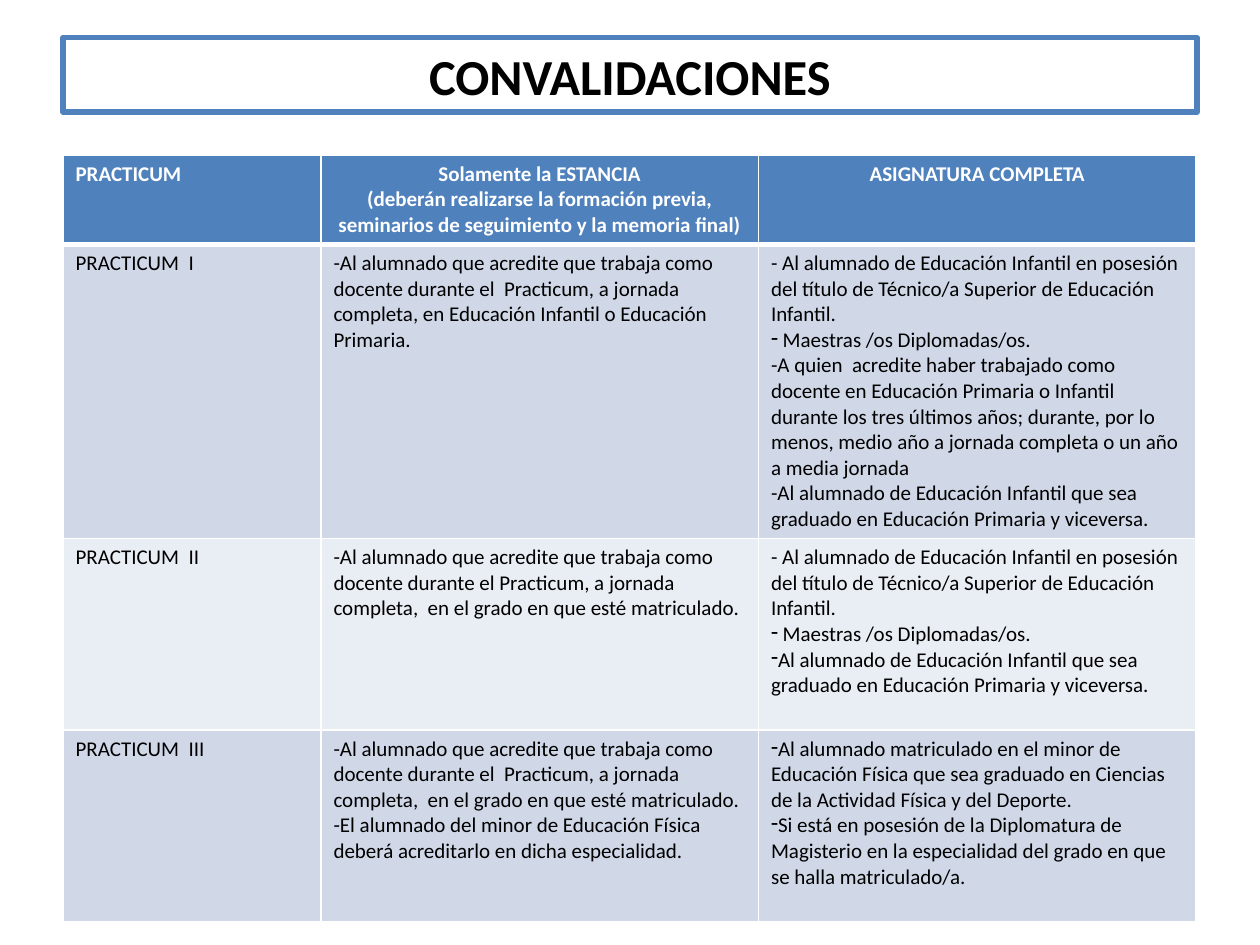
from dataclasses import dataclass

from lxml.etree import SubElement
from pptx import Presentation
from pptx.dml.color import RGBColor
from pptx.enum.shapes import MSO_SHAPE
from pptx.enum.text import MSO_ANCHOR, PP_ALIGN
from pptx.oxml.ns import qn
from pptx.util import Cm, Pt


@dataclass(frozen=True)
class Theme:
    font: str = "Calibri"
    blue: str = "4F81BD"
    dark: str = "D0D8E8"
    light: str = "E9EDF4"
    white: str = "FFFFFF"
    black: str = "000000"
    title: float = 28.8
    body: float = 12
    thin: float = 1
    thick: float = 3


@dataclass(frozen=True)
class Item:
    text: str
    bullet: bool = False


@dataclass(frozen=True)
class Row:
    height: float
    cells: tuple[tuple[Item, ...], ...]


THEME = Theme()
LEFT = 1.27
WIDTHS = (5.2, 8.82, 8.82)

DEGREE = Item(
    "- Al alumnado de Educación Infantil en posesión del título de "
    "Técnico/a Superior de Educación Infantil."
)
TEACHER = Item(" Maestras /os Diplomadas/os.", True)
GRADUATE = (
    "Al alumnado de Educación Infantil que sea graduado en "
    "Educación Primaria y viceversa."
)
WORKER = "-Al alumnado que acredite que trabaja como docente durante el "

ROWS = (
    Row(1.8, (
        (Item("PRACTICUM"),),
        (
            Item("Solamente la ESTANCIA"),
            Item("(deberán realizarse la formación previa, seminarios de "
                 "seguimiento y la memoria final)"),
        ),
        (Item("ASIGNATURA COMPLETA"),),
    )),
    Row(5.93, (
        (Item("PRACTICUM  I"),),
        (Item(WORKER + " Practicum, a jornada completa, en Educación Infantil "
              "o Educación Primaria."),),
        (
            DEGREE,
            TEACHER,
            Item("-A quien  acredite haber trabajado como docente en Educación "
                 "Primaria o Infantil durante los tres últimos años; durante, "
                 "por lo menos, medio año a jornada completa o un año a media "
                 "jornada"),
            Item("-" + GRADUATE),
        ),
    )),
    Row(3.86, (
        (Item("PRACTICUM  II"),),
        (Item(WORKER + "Practicum, a jornada completa,  en el grado en que "
              "esté matriculado."),),
        (DEGREE, TEACHER, Item(GRADUATE, True)),
    )),
    Row(3.86, (
        (Item("PRACTICUM  III"),),
        (Item(WORKER + " Practicum, a jornada completa,  en el grado en que "
              "esté matriculado. -El alumnado del minor de Educación Física "
              "deberá acreditarlo en dicha especialidad."),),
        (
            Item("Al alumnado matriculado en el minor de Educación Física que "
                 "sea graduado en Ciencias de la Actividad Física y del "
                 "Deporte.", True),
            Item("Si está en posesión de la Diplomatura de Magisterio en la "
                 "especialidad del grado en que se halla matriculado/a.", True),
        ),
    )),
)


def style(par, size: float, color: str, bold: bool, align) -> None:
    par.alignment = align
    for run in par.runs:
        run.font.name = THEME.font
        run.font.size = Pt(size)
        run.font.bold = bold
        run.font.color.rgb = RGBColor.from_string(color)


def dash(par) -> None:
    props = par._p.get_or_add_pPr()
    props.set("marL", "0")
    props.set("indent", "0")
    SubElement(props, qn("a:buFontTx"))
    SubElement(props, qn("a:buChar"), char="-")


def border(cell, side: str, width: float) -> None:
    props = cell._tc.get_or_add_tcPr()
    line = SubElement(props, qn(f"a:ln{side}"), w=str(Pt(width)))
    fill = SubElement(line, qn("a:solidFill"))
    SubElement(fill, qn("a:srgbClr"), val=THEME.white)


def draw_cell(cell, items: tuple[Item, ...], row: int, col: int) -> None:
    head = row == 0
    for side in "LRTB":
        edge = (side == "B" and head) or (side == "T" and row == 1)
        border(cell, side, THEME.thick if edge else THEME.thin)
    back = THEME.blue if head else THEME.dark if row % 2 else THEME.light
    cell.fill.solid()
    cell.fill.fore_color.rgb = RGBColor.from_string(back)
    frame = cell.text_frame
    frame.text = "\n".join(item.text for item in items)
    align = PP_ALIGN.CENTER if head and col else PP_ALIGN.LEFT
    color = THEME.white if head else THEME.black
    for par, item in zip(frame.paragraphs, items):
        style(par, THEME.body, color, head, align)
        if item.bullet:
            dash(par)


def draw_table(slide, rows: tuple[Row, ...]) -> None:
    frame = slide.shapes.add_table(
        len(rows), len(WIDTHS), Cm(LEFT), Cm(3.12),
        Cm(sum(WIDTHS)), Cm(sum(row.height for row in rows)),
    )
    table = frame.table
    for col, width in zip(table.columns, WIDTHS):
        col.width = Cm(width)
    for r, row in enumerate(rows):
        table.rows[r].height = Cm(row.height)
        for c, items in enumerate(row.cells):
            draw_cell(table.cell(r, c), items, r, c)


def draw_title(slide, text: str) -> None:
    box = slide.shapes.add_shape(
        MSO_SHAPE.RECTANGLE, Cm(LEFT), Cm(0.76), Cm(22.86), Cm(1.5)
    )
    box.shadow.inherit = False
    box.fill.background()
    box.line.color.rgb = RGBColor.from_string(THEME.blue)
    box.line.width = Pt(THEME.thick)
    frame = box.text_frame
    frame.word_wrap = True
    frame.vertical_anchor = MSO_ANCHOR.MIDDLE
    frame.text = text
    style(frame.paragraphs[0], THEME.title, THEME.black, True, PP_ALIGN.CENTER)


def main() -> None:
    deck = Presentation()
    deck.slide_width, deck.slide_height = Cm(25.4), Cm(19.05)
    slide = deck.slides.add_slide(deck.slide_layouts[6])
    draw_title(slide, "CONVALIDACIONES")
    draw_table(slide, ROWS)
    deck.save("out.pptx")


if __name__ == "__main__":
    main()
